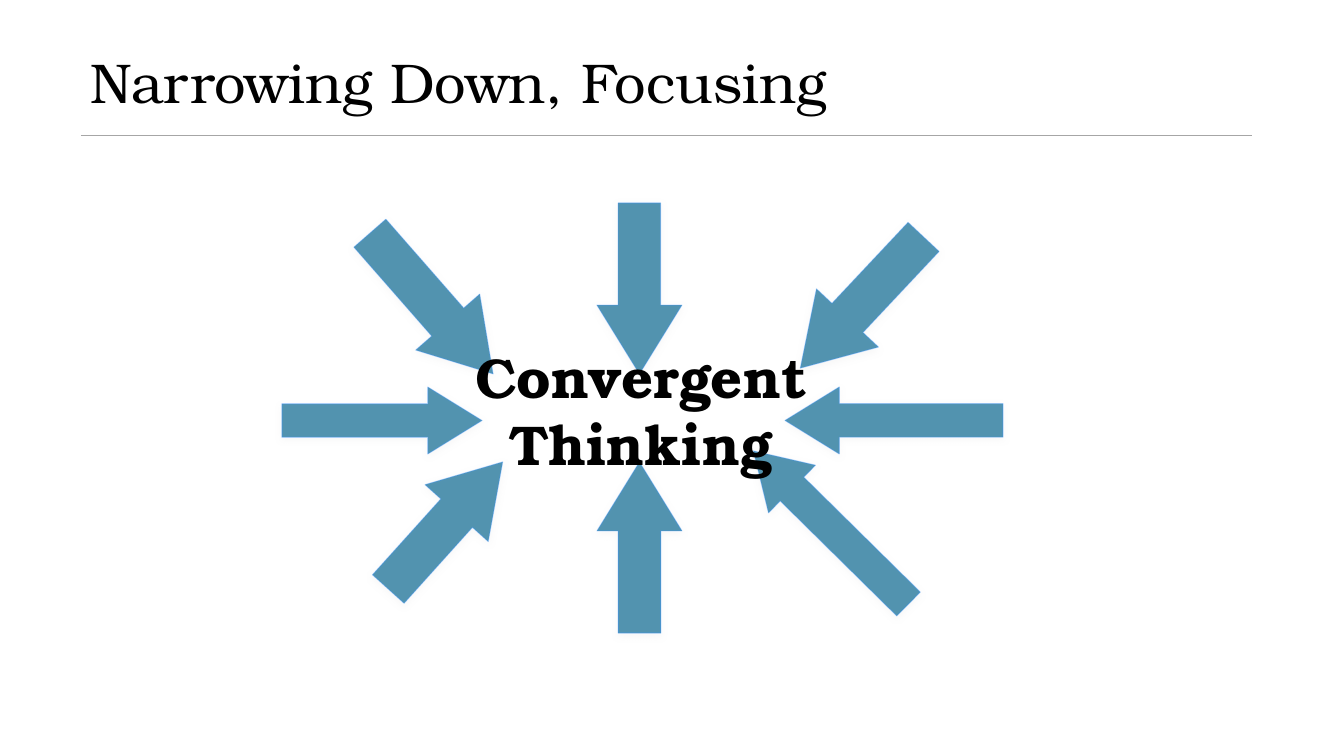
from lxml import etree
from pptx import Presentation
from pptx.dml.color import RGBColor
from pptx.enum.shapes import MSO_CONNECTOR, MSO_SHAPE
from pptx.enum.text import MSO_ANCHOR, PP_ALIGN
from pptx.oxml import parse_xml
from pptx.oxml.ns import nsdecls, qn
from pptx.util import Emu, Pt

LEFT_ARROW = MSO_SHAPE.LEFT_ARROW
STRAIGHT = MSO_CONNECTOR.STRAIGHT
MIDDLE, BOTTOM = MSO_ANCHOR.MIDDLE, MSO_ANCHOR.BOTTOM
LEFT, CENTER = PP_ALIGN.LEFT, PP_ALIGN.CENTER

BLACK = RGBColor(0x00, 0x00, 0x00)
RULE_GRAY = RGBColor(0xA6, 0xA6, 0xA6)
ARROW_FILL = RGBColor(0x2C, 0x7C, 0x9F)
ARROW_EDGE = RGBColor(0x3A, 0x93, 0xFF)
SHADOW_GRAY = RGBColor(0xE7, 0xE6, 0xE6)


def px(length):
    return Emu(round(length * 914400 / 100.8))


def set_alpha(fill_parent, percent):
    color = fill_parent.find(qn("a:solidFill"))[0]
    etree.SubElement(color, qn("a:alpha")).set("val", str(percent * 1000))


class Deck:
    font = "TeX Gyre Bonum"
    size = Pt(40)

    def __init__(self):
        self.prs = Presentation()
        self.prs.slide_width, self.prs.slide_height = px(1344), px(756)
        self.slide = self.prs.slides.add_slide(self.prs.slide_layouts[6])

    def rule(self, x1, x2, y):
        line = self.slide.shapes.add_connector(STRAIGHT, px(x1), px(y), px(x2), px(y))
        line.line.color.rgb = RULE_GRAY
        line.line.width = Pt(0.5)
        etree.SubElement(line._element.spPr, qn("a:effectLst"))

    def text(self, box, lines, anchor, align, bold=False, spacing=1.0):
        frame = self.slide.shapes.add_textbox(*map(px, box)).text_frame
        frame.word_wrap = True
        frame.vertical_anchor = anchor
        frame.text = "\n".join(lines)
        for paragraph in frame.paragraphs:
            paragraph.alignment = align
            paragraph.line_spacing = spacing
            paragraph.font.name = self.font
            paragraph.font.size = self.size
            paragraph.font.bold = bold
            paragraph.font.color.rgb = BLACK

    def arrow(self, box, rotation):
        arrow = self.slide.shapes.add_shape(LEFT_ARROW, *map(px, box))
        arrow.rotation = rotation
        arrow.adjustments[0], arrow.adjustments[1] = 0.5, 0.81
        arrow.fill.solid()
        arrow.fill.fore_color.rgb = ARROW_FILL
        arrow.line.color.rgb = ARROW_EDGE
        arrow.line.width = Pt(0.75)
        properties = arrow._element.spPr
        set_alpha(properties, 81)
        set_alpha(properties.find(qn("a:ln")), 34)
        properties.append(parse_xml(
            f'<a:effectLst {nsdecls("a")}>'
            f'<a:outerShdw blurRad="{Pt(5)}" dist="{Pt(1.8)}" dir="5400000" rotWithShape="0">'
            f'<a:srgbClr val="{SHADOW_GRAY}"><a:alpha val="35000"/></a:srgbClr>'
            '</a:outerShdw></a:effectLst>'))


def main():
    deck = Deck()

    # Heading
    deck.rule(81, 1252, 135)
    deck.text((81, 12, 1159, 146), ["Narrowing Down, Focusing"], MIDDLE, LEFT, spacing=0.9)

    # Arrows pointing inwards: left, top, width, height, rotation
    for *box, rotation in [
        (338, 261, 187, 85, 228.8),
        (282, 387, 200, 67, 180),
        (785, 387, 218, 67, 0),
        (554, 246, 171, 85, 270),
        (772, 260, 180, 85, 313.2),
        (360, 483, 171, 85, 132),
        (554, 505, 171, 85, 90),
        (722, 494, 218, 67, 44.6),
    ]:
        deck.arrow(box, rotation)

    # Central idea
    deck.text((431, 376, 420, 106), ["Convergent", "Thinking"], BOTTOM, CENTER, bold=True)

    deck.prs.save("out.pptx")


if __name__ == "__main__":
    main()
